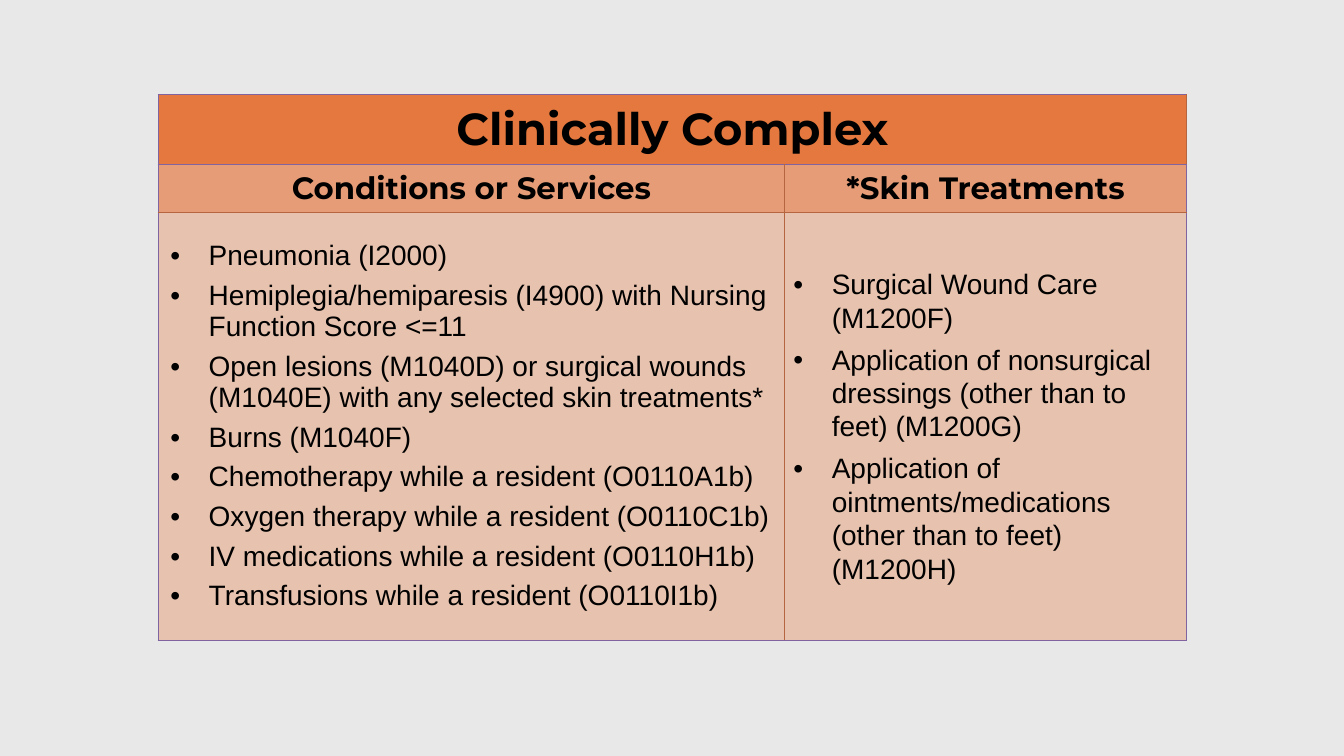
from lxml import etree
from pptx import Presentation
from pptx.dml.color import RGBColor
from pptx.enum import text
from pptx.oxml import ns
from pptx.util import Inches, Pt

COLORS = {
    "back": "E8E8E8",
    "title": "E4783E",
    "head": "E69D77",
    "body": "E7C3AF",
    "edge": "8064A2",
    "inner": "B5653F",
    "ink": "000000",
}
COLS = [6.21, 3.99]
ROWS = [0.69, 0.46, 4.25]
FILLS = ["title", "head", "body"]
SERVICES = [
    "Pneumonia (I2000)",
    "Hemiplegia/hemiparesis (I4900) with Nursing Function Score <=11",
    "Open lesions (M1040D) or surgical wounds (M1040E) with any selected skin treatments*",
    "Burns (M1040F)",
    "Chemotherapy while a resident (O0110A1b)",
    "Oxygen therapy while a resident (O0110C1b)",
    "IV medications while a resident (O0110H1b)",
    "Transfusions while a resident (O0110I1b)",
]
SKIN = [
    "Surgical Wound Care (M1200F)",
    "Application of nonsurgical dressings (other than to feet) (M1200G)",
    "Application of ointments/medications (other than to feet) (M1200H)",
]


def color(name):
    return RGBColor.from_string(COLORS[name])


def set_font(para, face, size, bold):
    font = para.font
    font.name, font.size, font.bold = face, Pt(size), bold
    font.color.rgb = color("ink")


def add_edge(cell, side, name, width):
    props = cell._tc.get_or_add_tcPr()
    line = etree.SubElement(props, ns.qn(f"a:ln{side}"), w=str(Pt(width)))
    fill = etree.SubElement(line, ns.qn("a:solidFill"))
    etree.SubElement(fill, ns.qn("a:srgbClr"), val=COLORS[name])


def style_cell(cell, row, col):
    outer = {"L": col == 0, "R": col == 1, "T": row < 2, "B": row != 1}
    for side, edge in outer.items():
        add_edge(cell, side, "edge" if edge else "inner", 1 if edge else 0.5)
    cell.fill.solid()
    cell.fill.fore_color.rgb = color(FILLS[row])
    cell.vertical_anchor = text.MSO_ANCHOR.MIDDLE


def add_head(cell, words, size):
    para = cell.text_frame.paragraphs[0]
    para.text = words
    para.alignment = text.PP_ALIGN.CENTER
    set_font(para, "Montserrat", size, True)


def add_list(cell, items, spacing=None):
    frame = cell.text_frame
    for i, item in enumerate(items):
        para = frame.add_paragraph() if i else frame.paragraphs[0]
        para.text = item
        para.space_after = Pt(6)
        para.line_spacing = spacing
        props = para._p.get_or_add_pPr()
        props.set("marL", str(Inches(0.4)))
        props.set("indent", str(Inches(-0.38)))
        etree.SubElement(props, ns.qn("a:buFont"), typeface="Arial")
        etree.SubElement(props, ns.qn("a:buChar"), char="•")
        set_font(para, "Arial", 20, False)


def add_grid(slide):
    frame = slide.shapes.add_table(
        len(ROWS), len(COLS), Inches(1.57), Inches(0.94),
        Inches(sum(COLS)), Inches(sum(ROWS)))
    table = frame.table
    for col, width in zip(table.columns, COLS):
        col.width = Inches(width)
    for row, height in zip(table.rows, ROWS):
        row.height = Inches(height)
    for row in range(len(ROWS)):
        for col in range(len(COLS)):
            style_cell(table.cell(row, col), row, col)
    table.cell(0, 0).merge(table.cell(0, 1))
    return table


def main():
    deck = Presentation()
    deck.slide_width, deck.slide_height = Inches(13.33), Inches(7.5)
    slide = deck.slides.add_slide(deck.slide_layouts[6])
    back = slide.background.fill
    back.solid()
    back.fore_color.rgb = color("back")
    table = add_grid(slide)
    add_head(table.cell(0, 0), "Clinically Complex", 32)
    add_head(table.cell(1, 0), "Conditions or Services", 22)
    add_head(table.cell(1, 1), "*Skin Treatments", 22)
    add_list(table.cell(2, 0), SERVICES)
    skin = table.cell(2, 1)
    skin.margin_left = skin.margin_right = Inches(0.07)
    skin.margin_top = skin.margin_bottom = 0
    add_list(skin, SKIN, 1.07)
    deck.save("out.pptx")


if __name__ == "__main__":
    main()
